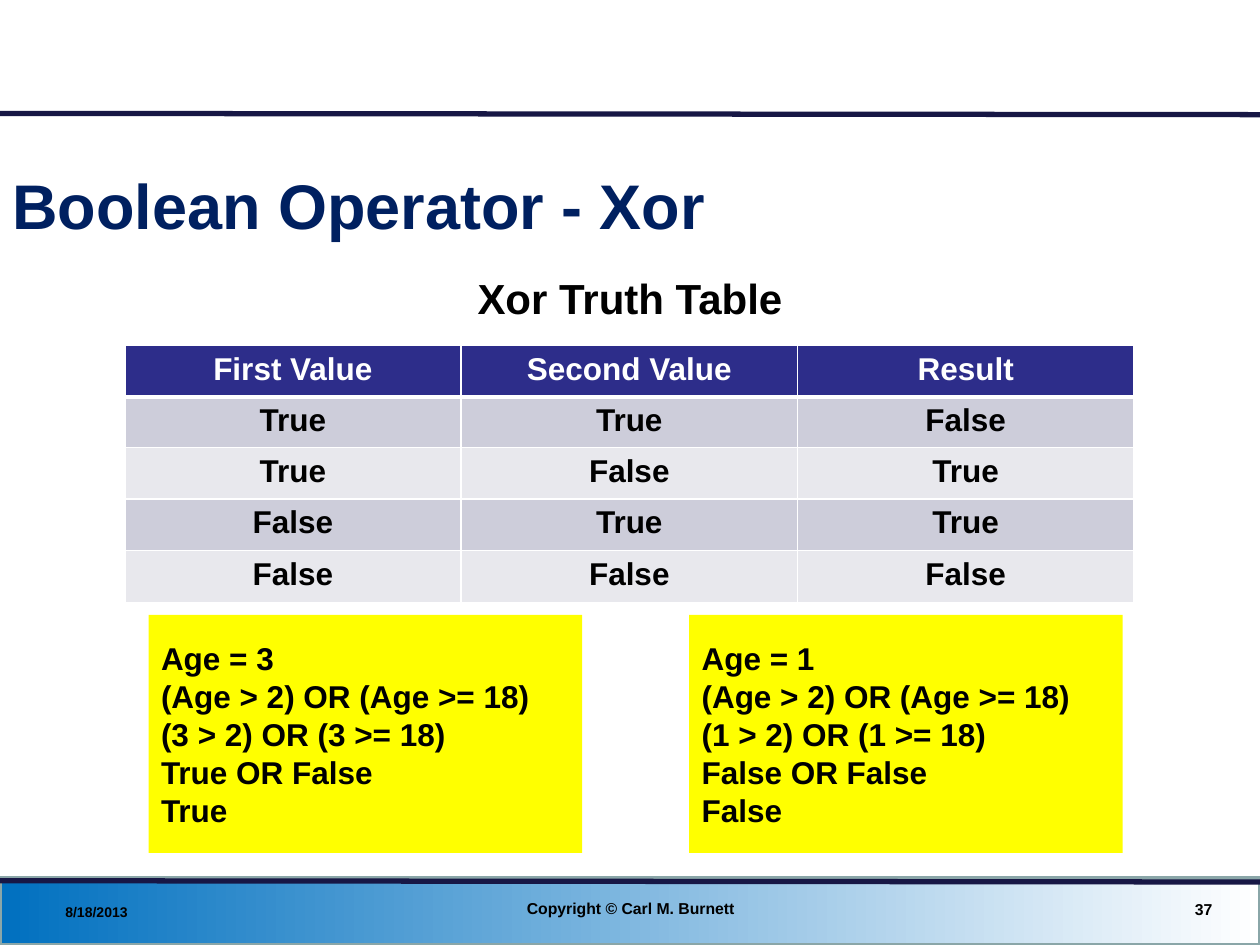
"""Builds the slide on the Xor Boolean operator."""
from lxml.etree import SubElement
from pptx import Presentation
from pptx.dml.color import RGBColor
from pptx.enum.shapes import MSO_CONNECTOR, MSO_SHAPE
from pptx.enum.text import MSO_ANCHOR, MSO_AUTO_SIZE, PP_ALIGN
from pptx.oxml import parse_xml
from pptx.oxml.ns import nsdecls, qn
from pptx.util import Inches, Pt

NAVY, RULE, HEADER = "002060", "171745", "2D2D8A"
BLACK, WHITE, YELLOW = "000000", "FFFFFF", "FFFF00"
BANDS = ("CDCDDA", "E8E8ED")
LEFT, CENTER, RIGHT = PP_ALIGN.LEFT, PP_ALIGN.CENTER, PP_ALIGN.RIGHT

RULES = [(6.99, 7), (0.9, 0.91)]
LABELS = [
    ("Boolean Operator - Xor", (0, 1.14, 9.58, 0.97), 36, NAVY, LEFT),
    ("8/18/2013", (0.42, 7.1, 2.33, 0.27), 8, BLACK, LEFT),
    ("37", (7.39, 7.07, 2.33, 0.29), 9, BLACK, RIGHT),
    ("Copyright © Carl M. Burnett", (3.42, 7.06, 3.17, 0.29), 9, BLACK, CENTER),
]
TABLE_TITLE = "Xor Truth Table"
TRUTH_TABLE = [
    ("First Value", "Second Value", "Result"),
    ("True", "True", "False"),
    ("True", "False", "True"),
    ("False", "True", "True"),
    ("False", "False", "False"),
]
ROW_HEIGHTS = (0.41, 0.38, 0.41, 0.41, 0.41)
COLUMN_WIDTH = 2.67
EXAMPLES = [
    (1.18, ("Age = 3", "(Age > 2) OR (Age >= 18)", "(3 > 2) OR (3 >= 18)",
            "True OR False", "True")),
    (5.47, ("Age = 1", "(Age > 2) OR (Age >= 18)", "(1 > 2) OR (1 >= 18)",
            "False OR False", "False")),
]


def color(value):
    return RGBColor.from_string(value)


def inches(values):
    return [Inches(value) for value in values]


def write(text_frame, text, size, text_color, alignment):
    text_frame.text = text
    for paragraph in text_frame.paragraphs:
        paragraph.alignment = alignment
        for run in paragraph.runs:
            run.font.name = "Arial"
            run.font.size = Pt(size)
            run.font.bold = True
            run.font.color.rgb = color(text_color)


def add_label(slide, text, box, size, text_color, alignment):
    text_frame = slide.shapes.add_textbox(*inches(box)).text_frame
    text_frame.word_wrap = True
    text_frame.vertical_anchor = MSO_ANCHOR.MIDDLE
    write(text_frame, text, size, text_color, alignment)
    return text_frame


def add_rectangle(slide, box):
    shape = slide.shapes.add_shape(MSO_SHAPE.RECTANGLE, *inches(box))
    shape.shadow.inherit = False
    return shape


def add_footer_band(slide):
    band = add_rectangle(slide, (0, 6.97, 10, 0.53))
    band.fill.gradient()
    band.fill.gradient_angle = 0
    for stop, stop_color in zip(band.fill.gradient_stops, ("0070C0", WHITE)):
        stop.color.rgb = color(stop_color)
    band.line.color.rgb = color("8AA6A8")
    band.line.width = Pt(2)


def add_rule(slide, start, end):
    line = slide.shapes.add_connector(
        MSO_CONNECTOR.STRAIGHT, *inches((0, start, 10, end)))
    line.line.color.rgb = color(RULE)
    line.line.width = Pt(3)
    SubElement(line._element.spPr, qn("a:effectLst"))


def set_borders(cell, widths):
    properties = cell._tc.get_or_add_tcPr()
    for index, (side, width) in enumerate(zip("LRTB", widths)):
        properties.insert(index, parse_xml(
            f'<a:ln{side} {nsdecls("a")} w="{Pt(width)}"><a:solidFill>'
            f'<a:srgbClr val="{WHITE}"/></a:solidFill></a:ln{side}>'))


def add_truth_table(slide):
    columns = len(TRUTH_TABLE[0])
    box = (0.99, 2.74, COLUMN_WIDTH * columns, sum(ROW_HEIGHTS))
    table = slide.shapes.add_table(len(TRUTH_TABLE), columns, *inches(box)).table
    for column in table.columns:
        column.width = Inches(COLUMN_WIDTH)
    for row, values in enumerate(TRUTH_TABLE):
        table.rows[row].height = Inches(ROW_HEIGHTS[row])
        fill_color = BANDS[(row - 1) % 2] if row else HEADER
        top, bottom = (3 if row == 1 else 1), (1 if row else 3)
        for column, value in enumerate(values):
            cell = table.cell(row, column)
            cell.fill.solid()
            cell.fill.fore_color.rgb = color(fill_color)
            set_borders(cell, (1, 1, top, bottom))
            write(cell.text_frame, value, 18, BLACK if row else WHITE, CENTER)


def add_example(slide, left, lines):
    box = add_rectangle(slide, (left, 4.88, 3.44, 1.89))
    box.fill.solid()
    box.fill.fore_color.rgb = color(YELLOW)
    box.line.fill.background()
    box.text_frame.vertical_anchor = MSO_ANCHOR.MIDDLE
    write(box.text_frame, "\n".join(lines), 18, BLACK, LEFT)


def main():
    presentation = Presentation()
    presentation.slide_width, presentation.slide_height = inches((10, 7.5))
    slide = presentation.slides.add_slide(presentation.slide_layouts[6])
    add_footer_band(slide)
    for start, end in RULES:
        add_rule(slide, start, end)
    for label in LABELS:
        add_label(slide, *label)
    add_truth_table(slide)
    table_title = add_label(
        slide, TABLE_TITLE, (3.68, 2.11, 2.64, 0.5), 24, BLACK, CENTER)
    table_title.word_wrap = False
    table_title.auto_size = MSO_AUTO_SIZE.SHAPE_TO_FIT_TEXT
    table_title.vertical_anchor = MSO_ANCHOR.TOP
    for left, lines in EXAMPLES:
        add_example(slide, left, lines)
    presentation.save("out.pptx")


if __name__ == "__main__":
    main()
